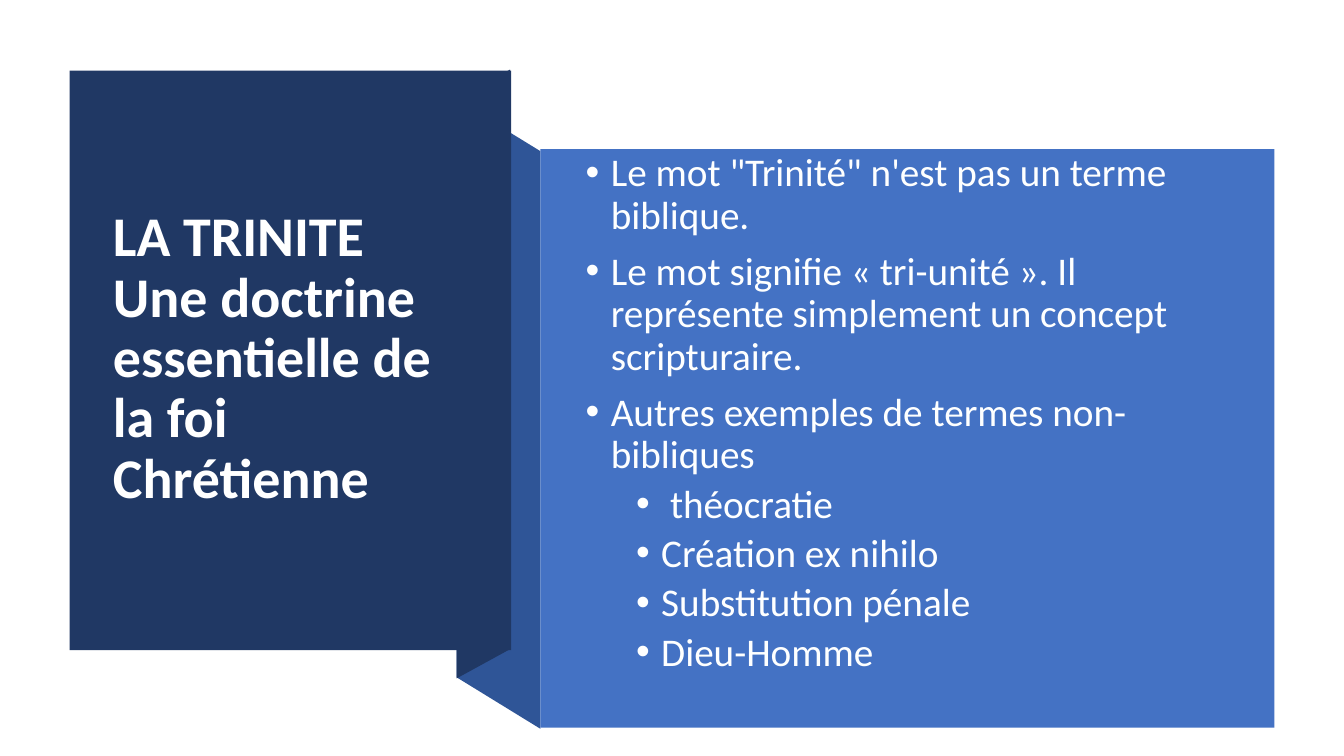
import pptx
import pptx.dml.color
import pptx.enum.shapes
import pptx.enum.text
import pptx.oxml.ns
import pptx.util
from lxml import etree

NAVY = pptx.dml.color.RGBColor(0x20, 0x38, 0x64)
FOLD_BLUE = pptx.dml.color.RGBColor(0x2F, 0x55, 0x97)
PANEL_BLUE = pptx.dml.color.RGBColor(0x44, 0x72, 0xC4)
WHITE = pptx.dml.color.RGBColor(0xFF, 0xFF, 0xFF)
OFF_WHITE = pptx.dml.color.RGBColor(0xFE, 0xFF, 0xFF)

EMU_PER_PX = 9144
TITLE_ONLY = 5

TITLE_LINES = ["LA TRINITE ", "Une doctrine essentielle de la foi Chrétienne"]
POINTS = [
    (0, "Le mot \"Trinité\" n'est pas un terme biblique."),
    (0, "Le mot signifie « tri-unité ». Il représente simplement un concept scripturaire."),
    (0, "Autres exemples de termes non-bibliques"),
    (1, " théocratie "),
    (1, "Création ex nihilo"),
    (1, "Substitution pénale"),
    (1, "Dieu-Homme"),
]


def px(length):
    return pptx.util.Emu(length * EMU_PER_PX)


class SlideBuilder:
    font_name = "Calibri"
    line_spacing = 0.9

    def __init__(self, deck):
        self.page = deck.slides.add_slide(deck.slide_layouts[TITLE_ONLY])

    def paint(self, shape, color):
        shape.shadow.inherit = False
        shape.fill.solid()
        shape.fill.fore_color.rgb = color
        shape.line.fill.background()

    def outline(self, points, color):
        builder = self.page.shapes.build_freeform(*points[0], scale=EMU_PER_PX)
        builder.add_line_segments(points[1:], close=True)
        self.paint(builder.convert_to_shape(), color)

    def panel(self, left, top, width, height, color):
        shape = self.page.shapes.add_shape(
            pptx.enum.shapes.MSO_SHAPE.RECTANGLE,
            px(left), px(top), px(width), px(height))
        self.paint(shape, color)

    def prepare_frame(self, frame):
        frame.word_wrap = True
        frame.auto_size = pptx.enum.text.MSO_AUTO_SIZE.NONE
        frame.vertical_anchor = pptx.enum.text.MSO_ANCHOR.MIDDLE

    def style(self, paragraph, size, color, bold=False):
        paragraph.alignment = pptx.enum.text.PP_ALIGN.LEFT
        paragraph.line_spacing = self.line_spacing
        paragraph.font.name = self.font_name
        paragraph.font.size = pptx.util.Pt(size)
        paragraph.font.bold = bold
        paragraph.font.color.rgb = color

    def title(self, lines, left, top, width, height):
        title = self.page.shapes.title
        title.left, title.top = px(left), px(top)
        title.width, title.height = px(width), px(height)
        title.element.getparent().append(title.element)
        self.prepare_frame(title.text_frame)
        paragraph = title.text_frame.paragraphs[0]
        for index, line in enumerate(lines):
            if index:
                paragraph.add_line_break()
            paragraph.add_run().text = line
        self.style(paragraph, 40, WHITE, bold=True)

    def bullet(self, paragraph, level):
        properties = paragraph._p.get_or_add_pPr()
        properties.set("marL", str(px(25 + 50 * level)))
        properties.set("indent", str(px(-25)))
        spacing_end = properties.find(pptx.oxml.ns.qn("a:defRPr"))
        font = etree.Element(pptx.oxml.ns.qn("a:buFont"), typeface="Arial")
        mark = etree.Element(pptx.oxml.ns.qn("a:buChar"), char="•")
        for element in (font, mark):
            spacing_end.addprevious(element)

    def bullet_list(self, points, left, top, width, height):
        box = self.page.shapes.add_textbox(px(left), px(top), px(width), px(height))
        frame = box.text_frame
        self.prepare_frame(frame)
        for index, (level, text) in enumerate(points):
            paragraph = frame.add_paragraph() if index else frame.paragraphs[0]
            paragraph.text = text
            paragraph.level = level
            paragraph.space_before = pptx.util.Pt(5 if level else 10)
            self.style(paragraph, 28, OFF_WHITE)
            self.bullet(paragraph, level)


def main():
    deck = pptx.Presentation()
    deck.slide_width = pptx.util.Inches(13.33)
    deck.slide_height = pptx.util.Inches(7.5)

    slide = SlideBuilder(deck)
    slide.outline([(536, 723), (453, 672), (453, 99), (536, 150)], FOLD_BLUE)
    slide.outline([(506, 644), (453, 673), (453, 98), (506, 69)], NAVY)
    slide.panel(69, 70, 438, 575, NAVY)
    slide.title(TITLE_LINES, 102, 107, 371, 499)
    slide.panel(536, 148, 728, 574, PANEL_BLUE)
    slide.bullet_list(POINTS, 571, 148, 651, 525)

    deck.save("out.pptx")


if __name__ == "__main__":
    main()
